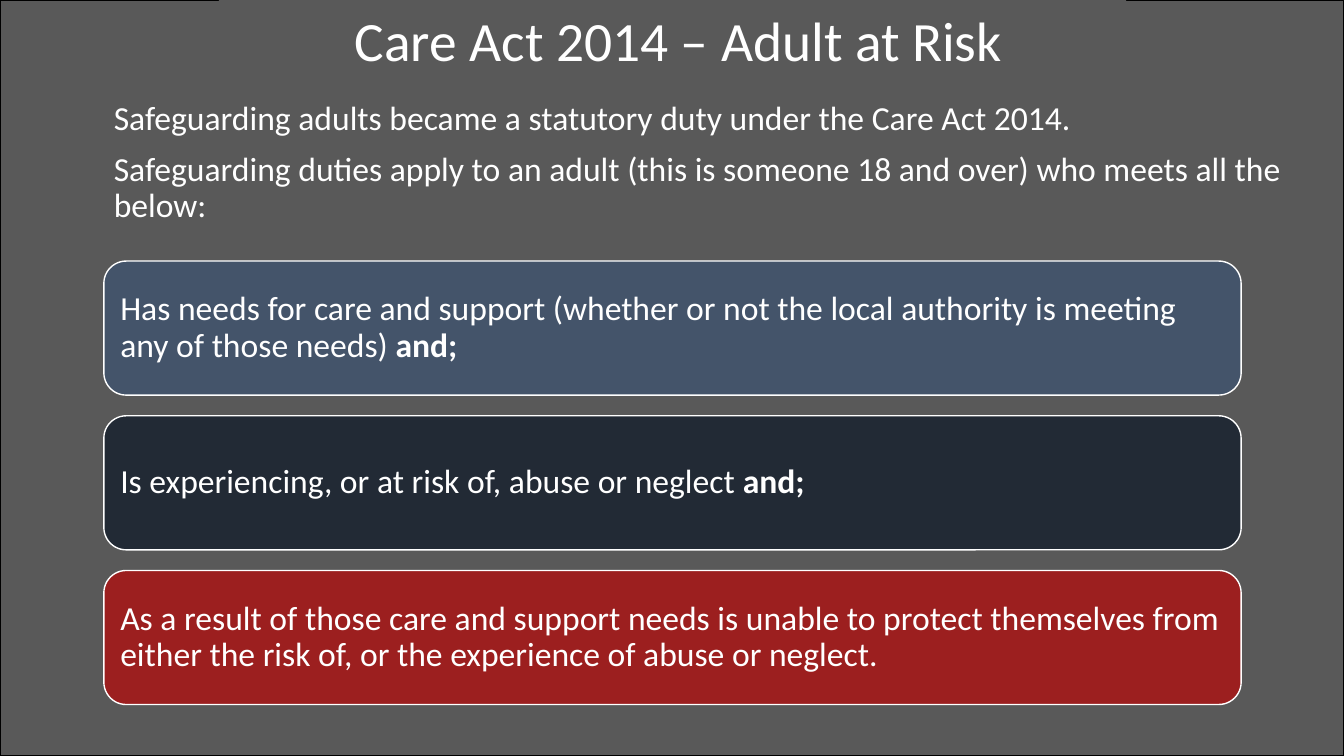
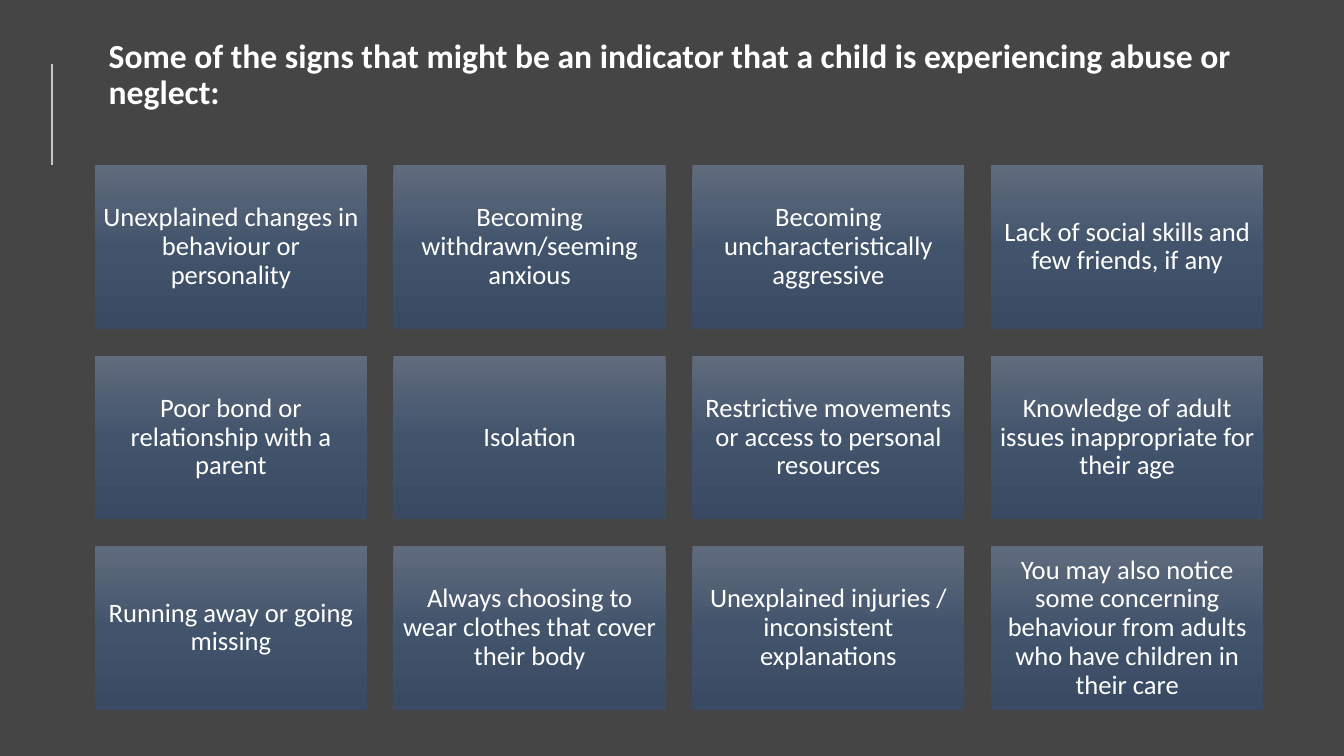
from copy import deepcopy
from dataclasses import dataclass, field
from typing import Any

from lxml.etree import SubElement
from pptx import Presentation
from pptx.dml.color import RGBColor
from pptx.enum.shapes import MSO_CONNECTOR as Connector, MSO_SHAPE as Preset
from pptx.enum.text import MSO_ANCHOR as Anchor, PP_ALIGN as Align
from pptx.oxml.ns import qn
from pptx.util import Inches, Pt

SLIDE_WIDTH, SLIDE_HEIGHT = 13.33, 7.5
FONT = "Calibri"
WHITE, BLACK = "FFFFFF", "000000"
GREY, DARK_GREY, RULE_GREY = "595959", "454545", "C7C7C7"
SLATE, NAVY, RED = "44546A", "222A35", "9C1F1F"
TILE_GRADIENT = ("606B7D", "42546C", "394A62")


@dataclass(frozen=True)
class Box:
    left: float
    top: float
    width: float
    height: float

    def lengths(self) -> list[int]:
        return [Inches(v) for v in (self.left, self.top, self.width, self.height)]


@dataclass(frozen=True)
class Grid:
    """Equal cells spread over an area; the gaps take what is left."""
    area: Box
    columns: int
    rows: int
    cell_width: float
    cell_height: float

    def cell(self, index: int) -> Box:
        row, column = divmod(index, self.columns)
        across = (self.area.width - self.cell_width) / max(self.columns - 1, 1)
        down = (self.area.height - self.cell_height) / max(self.rows - 1, 1)
        return Box(self.area.left + column * across, self.area.top + row * down,
                   self.cell_width, self.cell_height)


@dataclass(frozen=True)
class TextStyle:
    size: float
    bold: bool = False
    anchor: Any = Anchor.MIDDLE
    inset_x: float = 0.1
    inset_y: float = 0.05
    paragraph: dict[str, Any] = field(default_factory=dict)


@dataclass(frozen=True)
class Criterion:
    text: str
    joiner: str
    colour: str


TITLE = TextStyle(39.6, paragraph={"alignment": Align.CENTER})
HEADING = TextStyle(24, bold=True)
INTRO = TextStyle(24, anchor=Anchor.TOP, paragraph={"space_before": Pt(10)})
CARD = TextStyle(24, inset_y=0.1)
TILE = TextStyle(19, inset_x=0.08, inset_y=0.08,
                 paragraph={"alignment": Align.CENTER})

INTRO_LINES = (
    "Safeguarding adults became a statutory duty under the Care Act 2014.",
    "Safeguarding duties apply to an adult (this is someone 18 and over) "
    "who meets all the below:",
)
CRITERIA = (
    Criterion("Has needs for care and support (whether or not the local authority "
              "is meeting any of those needs)", " and;", SLATE),
    Criterion("Is experiencing, or at risk of, abuse or neglect", " and;", NAVY),
    Criterion("As a result of those care and support needs is unable to protect "
              "themselves from either the risk of, or the experience of abuse or "
              "neglect.", "", RED),
)
SIGNS = (
    "Unexplained changes in behaviour or personality",
    "Becoming withdrawn/seeming anxious",
    "Becoming uncharacteristically aggressive",
    "Lack of social skills and few friends, if any",
    "Poor bond or relationship with a parent",
    "Isolation",
    "Restrictive movements or access to personal resources",
    "Knowledge of adult issues inappropriate for their age",
    "Running away or going missing",
    "Always choosing to wear clothes that cover their body",
    "Unexplained injuries / inconsistent explanations",
    "You may also notice some concerning behaviour from adults who have "
    "children in their care",
)
CRITERIA_GRID = Grid(Box(1.03, 2.59, 11.28, 4.4), 1, 3, 11.28, 1.33)
SIGNS_GRID = Grid(Box(0.94, 1.64, 11.59, 5.4), 4, 3, 2.7, 1.62)


def rgb(colour: str) -> RGBColor:
    return RGBColor.from_string(colour)


def apply(target: Any, values: dict[str, Any]) -> None:
    for name, value in values.items():
        setattr(target, name, value)


def add_slide(presentation: Any, background: str) -> Any:
    slide = presentation.slides.add_slide(presentation.slide_layouts[6])
    slide.background.fill.solid()
    slide.background.fill.fore_color.rgb = rgb(background)
    return slide


def add_run(paragraph: Any, text: str, size: float, bold: bool) -> None:
    run = paragraph.add_run()
    run.text = text
    apply(run.font, {"name": FONT, "size": Pt(size), "bold": bold})
    run.font.color.rgb = rgb(WHITE)


def write(shape: Any, lines: tuple[str, ...], style: TextStyle,
          bold_ending: str = "") -> None:
    """Write one paragraph per line, then an optional bold ending."""
    frame = shape.text_frame
    apply(frame, {
        "word_wrap": True, "vertical_anchor": style.anchor,
        "margin_left": Inches(style.inset_x), "margin_right": Inches(style.inset_x),
        "margin_top": Inches(style.inset_y), "margin_bottom": Inches(style.inset_y),
    })
    for index, line in enumerate(lines):
        paragraph = frame.add_paragraph() if index else frame.paragraphs[0]
        apply(paragraph, {"alignment": Align.LEFT, "line_spacing": 0.9,
                          **style.paragraph})
        add_run(paragraph, line, style.size, style.bold)
    if bold_ending:
        add_run(paragraph, bold_ending, style.size, True)


def add_panel(slide: Any, box: Box, fill: str | tuple[str, ...],
              outline: str = "", preset: Any = Preset.RECTANGLE) -> Any:
    """Add a shape with a plain fill, or a top-to-bottom gradient for a tuple."""
    shape = slide.shapes.add_shape(preset, *box.lengths())
    shape.shadow.inherit = False
    if isinstance(fill, tuple):
        fill_gradient(shape, fill)
    else:
        shape.fill.solid()
        shape.fill.fore_color.rgb = rgb(fill)
    if outline:
        shape.line.color.rgb = rgb(outline)
        shape.line.width = Pt(1)
    else:
        shape.line.fill.background()
    return shape


def fill_gradient(shape: Any, colours: tuple[str, ...]) -> None:
    shape.fill.gradient()
    shape.fill.gradient_angle = 270
    stop_list = next(shape._element.spPr.iter(qn("a:gsLst")))
    while len(stop_list) < len(colours):
        stop_list.append(deepcopy(stop_list[0]))
    for index, stop in enumerate(shape.fill.gradient_stops):
        stop.color.rgb = rgb(colours[index])
        stop.position = index / (len(colours) - 1)


def add_text(slide: Any, box: Box, lines: tuple[str, ...], style: TextStyle) -> None:
    write(slide.shapes.add_textbox(*box.lengths()), lines, style)


def add_rule(slide: Any, x: float, top: float, bottom: float) -> None:
    ends = [Inches(v) for v in (x, top, x, bottom)]
    rule = slide.shapes.add_connector(Connector.STRAIGHT, *ends)
    rule.line.color.rgb = rgb(RULE_GREY)
    rule.line.width = Pt(1.5)
    SubElement(rule._element.spPr, qn("a:effectLst"))


def build_adult_at_risk(presentation: Any) -> None:
    slide = add_slide(presentation, WHITE)
    add_panel(slide, Box(0, 0, SLIDE_WIDTH, SLIDE_HEIGHT), GREY, BLACK)
    title = add_panel(slide, Box(2.17, 0, 9, 0.86), GREY)
    write(title, (" Care Act 2014 – Adult at Risk",), TITLE)
    add_text(slide, Box(1.03, 0.96, 12.08, 1.5), INTRO_LINES, INTRO)
    for index, criterion in enumerate(CRITERIA):
        card = add_panel(slide, CRITERIA_GRID.cell(index), criterion.colour, WHITE,
                         Preset.ROUNDED_RECTANGLE)
        write(card, (criterion.text,), CARD, criterion.joiner)


def build_signs_of_abuse(presentation: Any) -> None:
    slide = add_slide(presentation, DARK_GREY)
    heading = ("Some of the signs that might be an indicator that a child is "
               "experiencing abuse or neglect:")
    add_text(slide, Box(0.98, 0.28, 12.09, 0.94), (heading,), HEADING)
    add_rule(slide, 0.52, 0.64, SIGNS_GRID.area.top)
    for index, sign in enumerate(SIGNS):
        tile = add_panel(slide, SIGNS_GRID.cell(index), TILE_GRADIENT)
        write(tile, (sign,), TILE)


def main() -> None:
    presentation = Presentation()
    presentation.slide_width = Inches(SLIDE_WIDTH)
    presentation.slide_height = Inches(SLIDE_HEIGHT)
    build_adult_at_risk(presentation)
    build_signs_of_abuse(presentation)
    presentation.save("out.pptx")


if __name__ == "__main__":
    main()
